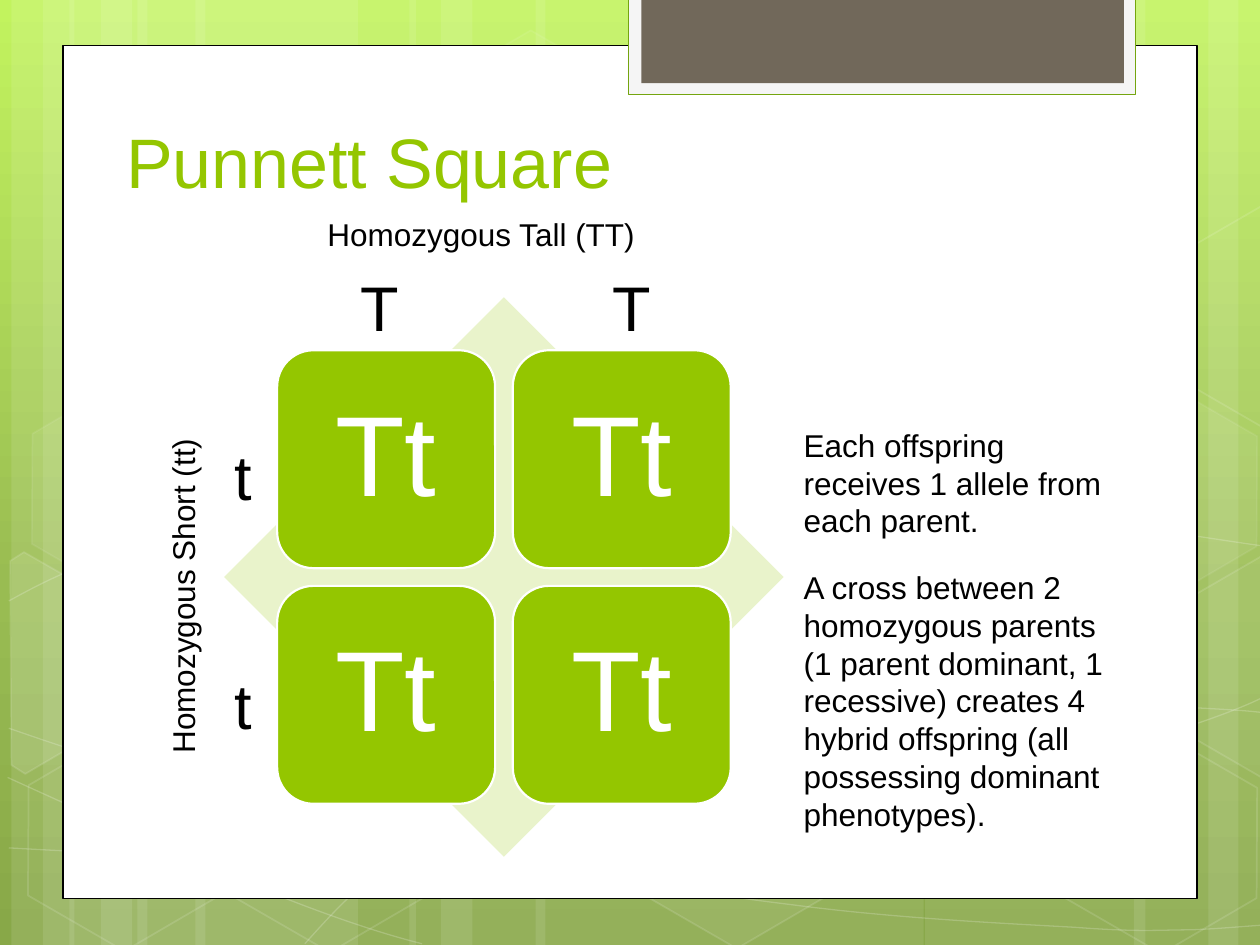
from copy import deepcopy
from math import cos, radians, sin

from lxml.etree import SubElement
from pptx import Presentation
from pptx.dml.color import RGBColor
from pptx.enum.shapes import MSO_SHAPE as SHAPE
from pptx.enum.text import MSO_ANCHOR as ANCHOR, MSO_AUTO_SIZE as AUTO, PP_ALIGN as ALIGN
from pptx.oxml.ns import qn
from pptx.util import Inches, Pt

COLORS = {
    "white": "FFFFFF", "black": "000000", "green": "94C600", "pale": "E9F3CB",
    "tab": "F5F5F5", "tab_line": "74A50F", "brown": "71685A",
}
GRADIENT = [(0, "C2F35E"), (0.62, "99BC52"), (1, "88A848")]
TILT = 30

# Vertical light bands: left, width
BANDS = [
    (1.09, 1.75), (0.09, 0.5), (0.34, 0.83), (1.55, 1.75), (0.55, 0.5), (0.8, 0.83),
    (7.34, 1.75), (9.59, 0.5), (9, 0.83), (4.25, 3.08), (3.25, 0.5), (3.5, 0.83),
]
# Curves: start point, then segments (two control points and an end, or just an end)
CURVES = [
    [(0.07, 6.73), (0.61, 6.76, 1.15, 6.79, 1.9, 6.78), (2.65, 6.77, 3.58, 6.75, 4.58, 6.65),
     (5.58, 6.55, 7, 6.36, 7.92, 6.17), (8.83, 5.98, 9.77, 5.68, 10.07, 5.51)],
    [(0.07, 4.77), (0.36, 4.61, 0.65, 4.46, 1.22, 4.31), (1.78, 4.16, 2.59, 3.94, 3.48, 3.87),
     (4.36, 3.8, 5.44, 3.79, 6.54, 3.87), (7.64, 3.95, 9.47, 4.26, 10.07, 4.34)],
    [(0.06, 6.17), (1.27, 6.72, 2.47, 7.27, 3.35, 7.49)],
    [(0.07, 5.78), (0.39, 5.89, 0.7, 6, 1.28, 6.16), (1.86, 6.31, 2.73, 6.56, 3.57, 6.73),
     (4.4, 6.9, 5.45, 7.08, 6.28, 7.18), (7.11, 7.29, 8, 7.33, 8.53, 7.36),
     (9.06, 7.4, 9.19, 7.38, 9.45, 7.38), (9.71, 7.37, 9.89, 7.35, 10.07, 7.34)],
    [(2.42, 7.49), (2.6, 7.29, 2.78, 7.09, 3.02, 6.91), (3.26, 6.72, 3.6, 6.53, 3.88, 6.39),
     (4.16, 6.25, 4.33, 6.19, 4.7, 6.09), (5.06, 5.99, 5.73, 5.85, 6.09, 5.78),
     (6.44, 5.71, 6.49, 5.71, 6.8, 5.69), (7.11, 5.66, 7.6, 5.63, 7.94, 5.62),
     (8.29, 5.61, 8.86, 5.62, 8.86, 5.62), (9.53, 5.62),
     (9.71, 5.63, 9.88, 5.64, 9.97, 5.65), (10.06, 5.66, 10.03, 5.65, 10.06, 5.66)],
]
# Hexagons: left, top, fill opacity, line opacity
HEXAGONS = [
    (3.34, 0.36, 4, 8), (4.97, 5.89, 6, 12), (0.11, 5.91, 0, 12), (0.14, 3.12, 7, 8),
    (1.74, 5.92, 0, 12), (7.53, 4.53, 10, 12), (8.34, 5.93, 0, 12), (8.34, 3.14, 7, 8),
]
# Hexagons cut by the slide edge: centre, points as seen after tilting, fill opacity
CUT_HEXAGONS = [
    ((0.36, 5.35), [(0.08, 4.45), (0.19, 4.38), (0.96, 4.82), (0.95, 5.7), (0.2, 6.14),
                    (0.09, 6.07)], 10),
    ((9.85, 5.2), [(9.26, 4.85), (10.02, 4.41), (10.09, 4.46), (10.09, 6.13), (10.02, 6.17),
                   (9.26, 5.73)], 4),
    ((9.85, 2.41), [(9.26, 2.07), (10.02, 1.63), (10.1, 1.68), (10.09, 3.35), (10.02, 3.39),
                    (9.26, 2.95)], 0),
]
NOTES = [
    "Each offspring receives 1 allele from each parent.",
    "A cross between 2 homozygous parents (1 parent dominant, 1 recessive) creates 4 "
    "hybrid offspring (all possessing dominant phenotypes).",
]


def rgb(name):
    return RGBColor.from_string(COLORS[name])


def paint(fill, color, opacity=100):
    if not color or not opacity:
        fill.background()
        return
    fill.solid()
    fill.fore_color.rgb = rgb(color)


def style(sp, fill=None, line=None, width=1, fill_opacity=100, line_opacity=100):
    sp.shadow.inherit = False
    paint(sp.fill, fill, fill_opacity)
    paint(sp.line.fill, line, line_opacity)
    if line:
        sp.line.width = Pt(width)
    spPr = sp._element.spPr
    for parent, opacity in ((spPr, fill_opacity), (spPr.find(qn("a:ln")), line_opacity)):
        clr = parent.find(qn("a:solidFill") + "/" + qn("a:srgbClr"))
        if clr is not None and opacity < 100:
            SubElement(clr, qn("a:alpha"), val=str(opacity * 1000))
    return sp


def add_shape(s, kind, box, **fmt):
    return style(s.shapes.add_shape(kind, *map(Inches, box)), **fmt)


def add_outline(s, points, close, **fmt):
    (x, y), *rest = [(Inches(px), Inches(py)) for px, py in points]
    builder = s.shapes.build_freeform(x, y)
    builder.add_line_segments(rest, close=close)
    return style(builder.convert_to_shape(), **fmt)


def add_curve(s, curve, **fmt):
    sp = add_outline(s, [segment[-2:] for segment in curve], False, **fmt)
    # Bend each straight segment that has control points
    for line_to, segment in zip(list(sp._element.iter(qn("a:lnTo"))), curve[1:]):
        if len(segment) == 6:
            line_to.tag = qn("a:cubicBezTo")
            for i, (x, y) in enumerate((segment[:2], segment[2:4])):
                pt = SubElement(line_to, qn("a:pt"), x=str(Inches(x) - sp.left),
                                y=str(Inches(y) - sp.top))
                line_to.insert(i, pt)


def write(sp, paragraphs, size, color="black", anchor=ANCHOR.TOP, inset=None, **para_fmt):
    tf = sp.text_frame
    frame = {"word_wrap": True, "auto_size": AUTO.NONE, "vertical_anchor": anchor}
    if inset:
        frame.update({f"margin_{side}": Inches(inset) for side in ("left", "top", "right", "bottom")})
    for name, value in frame.items():
        setattr(tf, name, value)
    for i, text in enumerate(paragraphs):
        p = tf.add_paragraph() if i else tf.paragraphs[0]
        for name, value in {"alignment": ALIGN.LEFT, **para_fmt}.items():
            setattr(p, name, value)
        r = p.add_run()
        r.text = text
        r.font.name, r.font.size = "Arial", Pt(size)
        r.font.color.rgb = rgb(color)


def add_text(s, box, paragraphs, size):
    sp = s.shapes.add_textbox(*map(Inches, box))
    write(sp, paragraphs, size)
    return sp


def untilt(point, centre):
    dx, dy = point[0] - centre[0], point[1] - centre[1]
    c, k = cos(radians(TILT)), sin(radians(TILT))
    return centre[0] + dx * c + dy * k, centre[1] - dx * k + dy * c


def backdrop(s, height):
    # Three-stop vertical gradient
    fill = s.background.fill
    fill.gradient()
    fill.gradient_angle = 270
    stops = next(s._element.iter(qn("a:gsLst")))
    stops.append(deepcopy(stops[-1]))
    for stop, (position, color) in zip(fill.gradient_stops, GRADIENT):
        stop.position = position
        stop.color.rgb = RGBColor.from_string(color)
    # Bands, curves and hexagons
    for left, width in BANDS:
        add_shape(s, SHAPE.RECTANGLE, (left, 0, width, height), fill="white", fill_opacity=10)
    for curve in CURVES:
        add_curve(s, curve, line="white", width=0.75, line_opacity=20)
    for left, top, fill_opacity, line_opacity in HEXAGONS:
        sp = add_shape(s, SHAPE.HEXAGON, (left, top, 1.75, 1.52), fill="white", line="white",
                       fill_opacity=fill_opacity, line_opacity=line_opacity)
        sp.adjustments[0] = 0.285
        sp.rotation = TILT
    for centre, points, opacity in CUT_HEXAGONS:
        sp = add_outline(s, [untilt(point, centre) for point in points], True, fill="white",
                         line="white", fill_opacity=opacity, line_opacity=12)
        sp.rotation = TILT


def panel(s, box):
    left, top, width, _ = box
    add_shape(s, SHAPE.RECTANGLE, box, fill="white", line="black", width=0.75)
    # Tab at the top right
    tab = left + width - 4.51
    add_shape(s, SHAPE.RECTANGLE, (tab, -0.02, 4.02, 0.77), fill="tab", line="tab_line", width=0.75)
    add_shape(s, SHAPE.RECTANGLE, (tab + 0.1, -0.02, 3.83, 0.68), fill="brown")


def heading(s, box, text):
    title = s.shapes.title
    s.shapes._spTree.append(title._element)  # in front of the panel
    title.left, title.top, title.width, title.height = map(Inches, box)
    write(title, [text], 40, "green", ANCHOR.BOTTOM)


def punnett_square(s, box):
    left, top, width, height = box
    add_shape(s, SHAPE.DIAMOND, box, fill="pale")
    # Two by two cells
    cell, pitch, margin = 1.73, 1.87, 0.42
    for row in range(2):
        for col in range(2):
            sp = add_shape(s, SHAPE.ROUNDED_RECTANGLE,
                           (left + margin + col * pitch, top + margin + row * pitch, cell, cell),
                           fill="green", line="white", width=1.25)
            write(sp, ["Tt"], 65, "white", ANCHOR.MIDDLE, 0.27,
                  alignment=ALIGN.CENTER, line_spacing=0.9, space_after=Pt(22.8))
    # Parent alleles and labels
    for i in range(2):
        add_text(s, (left + 0.98 + 2 * i, top - 0.28, 0.5, 0.71), ["T"], 36)
    for i in range(2):
        add_text(s, (left - 0.02, top + 1.06 + 1.82 * i, 0.5, 0.71), ["t"], 36)
    add_text(s, (left + 0.72, top - 0.7, 3, 0.4), ["Homozygous Tall (TT)"], 18)
    add_text(s, (left - 1.83, top + 2.02, 3, 0.4), ["Homozygous Short (tt)"], 18).rotation = 270


def notes(s, box):
    sp = add_text(s, box, NOTES, 18)
    sp.text_frame.paragraphs[1].space_before = Pt(16.5)


def main():
    prs = Presentation()
    prs.slide_width, prs.slide_height = Inches(10), Inches(7.5)
    s = prs.slides.add_slide(prs.slide_layouts[5])
    backdrop(s, 7.5)
    panel(s, (0.5, 0.36, 9, 6.77))
    heading(s, (0.9, 0.41, 7.68, 1.25), "Punnett Square")
    punnett_square(s, (1.78, 2.36, 4.44, 4.44))
    notes(s, (6.28, 3.33, 2.75, 3.43))
    prs.save("out.pptx")


if __name__ == "__main__":
    main()
